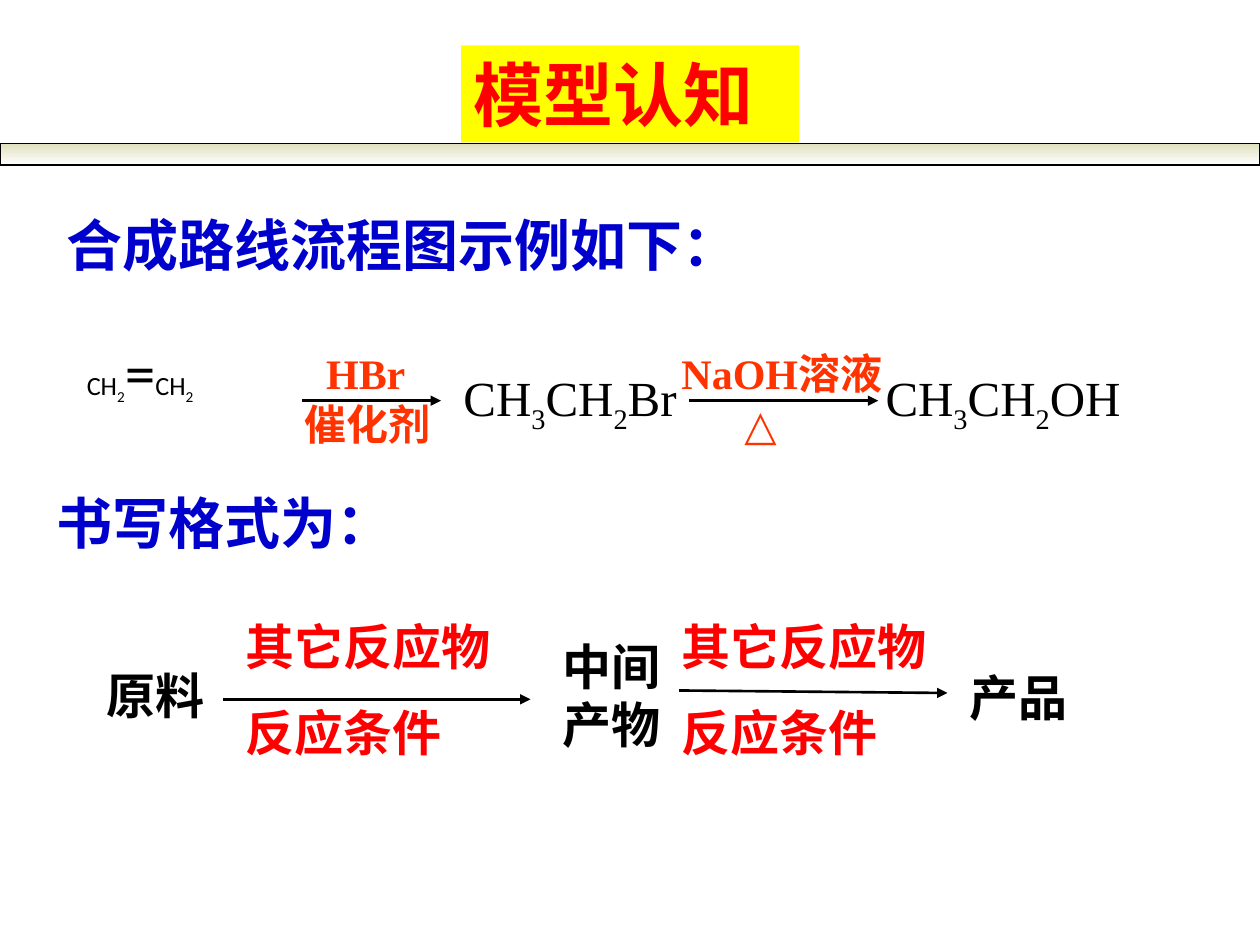
from lxml import etree
from pptx import Presentation
from pptx.dml.color import RGBColor
from pptx.enum.shapes import MSO_CONNECTOR, MSO_SHAPE
from pptx.enum.text import MSO_ANCHOR, PP_ALIGN
from pptx.oxml.ns import qn
from pptx.util import Inches, Pt

STRAIGHT = MSO_CONNECTOR.STRAIGHT
RECTANGLE = MSO_SHAPE.RECTANGLE
TOP = MSO_ANCHOR.TOP
LEFT = PP_ALIGN.LEFT

COLORS = {
    "black": "000000", "blue": "0000CC", "red": "FF0000", "orange": "FF3300",
    "yellow": "FFFF00", "bar_top": "DFE0BE", "white": "FFFFFF",
}

# left, top, width, height in inches
TITLE = ("模型认知", (3.66, 0.36, 2.68, 0.77))
BAR = (0, 1.14, 10, 0.17)

HEADINGS = [
    ("合成路线流程图示例如下：", (0.43, 1.62, 7.56, 0.63)),
    ("书写格式为：", (0.35, 3.83, 7.56, 0.63)),
]

# formula, place, font, size
FORMULAS = [
    ("CH2=CH2", (0.59, 2.67, 2.21, 0.7), "Calibri", 15),
    ("CH3CH2Br", (3.58, 2.87, 2.1, 0.57), "Times New Roman", 28),
    ("CH3CH2OH", (6.93, 2.87, 3.07, 0.57), "Times New Roman", 28),
]
DOUBLE_BOND_SIZE = 35

# (line, indent in inches) pairs, place
REAGENTS = [
    ([("HBr", 0.17), ("催化剂", 0)], (2.32, 2.71, 1.34, 0.9)),
    ([("NaOH溶液", 0), ("△", 0.5)], (5.31, 2.71, 2.05, 0.9)),
]

STAGES = [
    ("原料", (0.75, 5.23, 1.26, 0.57)),
    ("中间产物", (4.37, 5, 1.26, 1.03)),
    ("产品", (7.6, 5.25, 1.26, 0.57)),
]

STEP_LINES = [("其它反应物", 0), ("反应条件", 0)]
STEP_LEFTS = [1.85, 5.31]

# start x, start y, end x, end y
ARROWS = [
    (2.4, 3.18, 3.5, 3.18),
    (5.47, 3.18, 6.97, 3.18),
    (1.77, 5.55, 4.21, 5.55),
    (5.39, 5.48, 7.52, 5.5),
]


def color(name):
    return RGBColor.from_string(COLORS[name])


def style(font, name, size, color_name, bold=False):
    font.name = name
    font.size = Pt(size)
    font.bold = bold
    font.color.rgb = color(color_name)


def add_box(slide, place):
    box = slide.shapes.add_textbox(*map(Inches, place))
    box.text_frame.word_wrap = True
    return box


def add_lines(slide, lines, place, font_name, size, color_name, gap=0):
    """Add bold lines, each a (text, indent) pair, with gap points between."""
    frame = add_box(slide, place).text_frame
    frame.text = "\n".join(text for text, _ in lines)
    for index, (paragraph, (_, indent)) in enumerate(zip(frame.paragraphs, lines)):
        if indent:
            paragraph._p.get_or_add_pPr().set("marL", str(Inches(indent)))
        if index and gap:
            paragraph.space_before = Pt(gap)
        for run in paragraph.runs:
            style(run.font, font_name, size, color_name, bold=True)


def add_formula(slide, formula, place, font_name, size):
    """Write a chemical formula with its digits as subscripts."""
    paragraph = add_box(slide, place).text_frame.paragraphs[0]
    spaced = "".join(f" {sign} " if sign in "23=" else sign for sign in formula)
    for part in spaced.split():
        run = paragraph.add_run()
        run.text = part
        style(run.font, font_name, DOUBLE_BOND_SIZE if part == "=" else size, "black")
        if part.isdigit():
            run.font._element.set("baseline", "-25000")
    if "=" in formula:
        paragraph.line_spacing = 0.9


def add_arrow(slide, ends):
    arrow = slide.shapes.add_connector(STRAIGHT, *map(Inches, ends))
    arrow.line.color.rgb = color("black")
    arrow.line.width = Pt(1.5)
    etree.SubElement(arrow.line._get_or_add_ln(), qn("a:tailEnd"), type="triangle")
    etree.SubElement(arrow._element.spPr, qn("a:effectLst"))


def add_rectangle(slide, place):
    rectangle = slide.shapes.add_shape(RECTANGLE, *map(Inches, place))
    rectangle.shadow.inherit = False
    return rectangle


def add_bar(slide):
    bar = add_rectangle(slide, BAR)
    bar.fill.gradient()
    bar.fill.gradient_angle = 270
    for stop, name in zip(bar.fill.gradient_stops, ("bar_top", "white")):
        stop.color.rgb = color(name)
    bar.line.color.rgb = color("black")
    bar.line.width = Pt(0.75)


def add_title(slide):
    text, place = TITLE
    title = add_rectangle(slide, place)
    title.fill.solid()
    title.fill.fore_color.rgb = color("yellow")
    title.line.fill.background()
    frame = title.text_frame
    frame.text = text
    frame.vertical_anchor = TOP
    paragraph = frame.paragraphs[0]
    paragraph.alignment = LEFT
    style(paragraph.runs[0].font, "Arial", 40, "red", bold=True)


def main():
    deck = Presentation()
    deck.slide_width, deck.slide_height = Inches(10), Inches(7.5)
    slide = deck.slides.add_slide(deck.slide_layouts[6])

    for formula in FORMULAS:
        add_formula(slide, *formula)
    for lines, place in REAGENTS:
        add_lines(slide, lines, place, "Times New Roman", 24, "orange")
    for text, place in HEADINGS:
        add_lines(slide, [(text, 0)], place, "Arial", 32, "blue")
    for text, place in STAGES:
        add_lines(slide, [(text, 0)], place, "Arial", 28, "black")
    for left in STEP_LEFTS:
        add_lines(slide, STEP_LINES, (left, 4.84, 2.44, 1.27), "Arial", 28, "red", gap=16)
    for ends in ARROWS:
        add_arrow(slide, ends)
    add_bar(slide)
    add_title(slide)

    deck.save("out.pptx")


if __name__ == "__main__":
    main()
